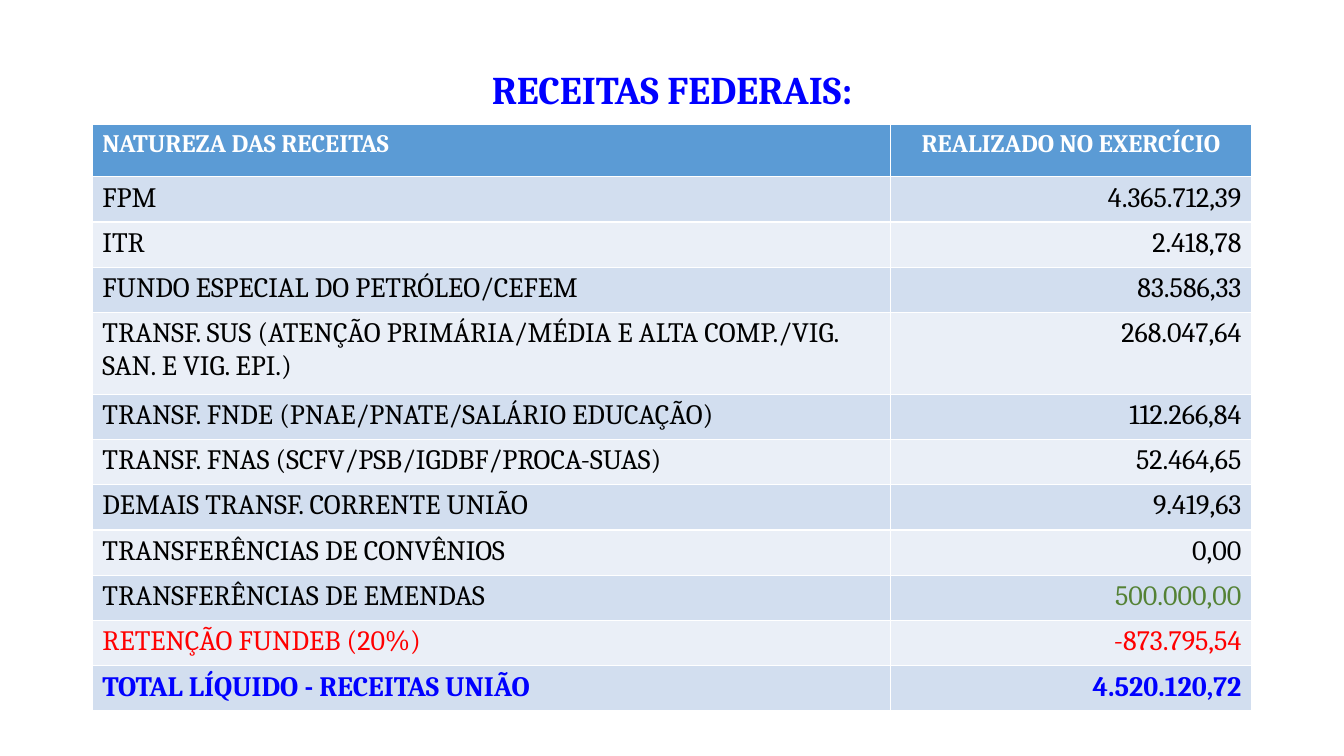
from pptx import Presentation
from pptx.dml.color import RGBColor
from pptx.enum.text import MSO_ANCHOR, PP_ALIGN
from pptx.util import Pt

COLORS = {
    "blue": "0000FF",
    "header": "5B9BD5",
    "dark_band": "D2DEEF",
    "light_band": "EAEFF7",
    "white": "FFFFFF",
    "black": "000000",
    "green": "548235",
    "red": "FF0000",
}


def write_text(text_frame, text, size=20, color="black", bold=False, align=PP_ALIGN.LEFT):
    paragraph = text_frame.paragraphs[0]
    paragraph.alignment = align
    run = paragraph.add_run()
    run.text = text
    run.font.name = "Cambria"
    run.font.size = Pt(size)
    run.font.bold = bold
    run.font.color.rgb = RGBColor.from_string(COLORS[color])
    return paragraph


presentation = Presentation()
presentation.slide_width = Pt(960)
presentation.slide_height = Pt(540)
slide = presentation.slides.add_slide(presentation.slide_layouts[5])

title = slide.shapes.title
title.left, title.top, title.width, title.height = Pt(66), Pt(39.6), Pt(828), Pt(52.6)
title.text_frame.vertical_anchor = MSO_ANCHOR.MIDDLE
heading = write_text(title.text_frame, "RECEITAS FEDERAIS:", size=28, color="blue",
                     bold=True, align=PP_ALIGN.CENTER)
heading.line_spacing = 0.9

revenues = [
    ("FPM", "4.365.712,39"),
    ("ITR", "2.418,78"),
    ("FUNDO ESPECIAL DO PETRÓLEO/CEFEM", "83.586,33"),
    ("TRANSF. SUS (ATENÇÃO PRIMÁRIA/MÉDIA E ALTA COMP./VIG. SAN. E VIG. EPI.)", "268.047,64"),
    ("TRANSF. FNDE (PNAE/PNATE/SALÁRIO EDUCAÇÃO)", "112.266,84"),
    ("TRANSF. FNAS (SCFV/PSB/IGDBF/PROCA-SUAS)", "52.464,65"),
    ("DEMAIS TRANSF. CORRENTE UNIÃO", "9.419,63"),
    ("TRANSFERÊNCIAS DE CONVÊNIOS", "0,00"),
    ("TRANSFERÊNCIAS DE EMENDAS", "500.000,00"),
    ("RETENÇÃO FUNDEB (20%)", "-873.795,54"),
    ("TOTAL LÍQUIDO - RECEITAS UNIÃO", "4.520.120,72"),
]
row_colors = {9: ("black", "green"), 10: ("red", "red"), 11: ("blue", "blue")}
row_heights = {0: 37.4, 4: 58.2}
total_row = len(revenues)

table = slide.shapes.add_table(total_row + 1, 2, Pt(66), Pt(88.9), Pt(828), Pt(419)).table
table.columns[0].width = Pt(570)
table.columns[1].width = Pt(258)

for row_index, row in enumerate(table.rows):
    row.height = Pt(row_heights.get(row_index, 32.35))

headers = [("NATUREZA DAS RECEITAS", PP_ALIGN.LEFT), ("REALIZADO NO EXERCÍCIO", PP_ALIGN.CENTER)]
for column_index, (text, align) in enumerate(headers):
    cell = table.cell(0, column_index)
    cell.fill.solid()
    cell.fill.fore_color.rgb = RGBColor.from_string(COLORS["header"])
    write_text(cell.text_frame, text, size=18, color="white", bold=True, align=align)

for row_index, revenue in enumerate(revenues, start=1):
    band = "dark_band" if row_index % 2 else "light_band"
    colors = row_colors.get(row_index, ("black", "black"))
    for column_index, text in enumerate(revenue):
        cell = table.cell(row_index, column_index)
        cell.fill.solid()
        cell.fill.fore_color.rgb = RGBColor.from_string(COLORS[band])
        write_text(cell.text_frame, text, color=colors[column_index], bold=row_index == total_row,
                   align=PP_ALIGN.RIGHT if column_index else PP_ALIGN.LEFT)

presentation.save("out.pptx")
